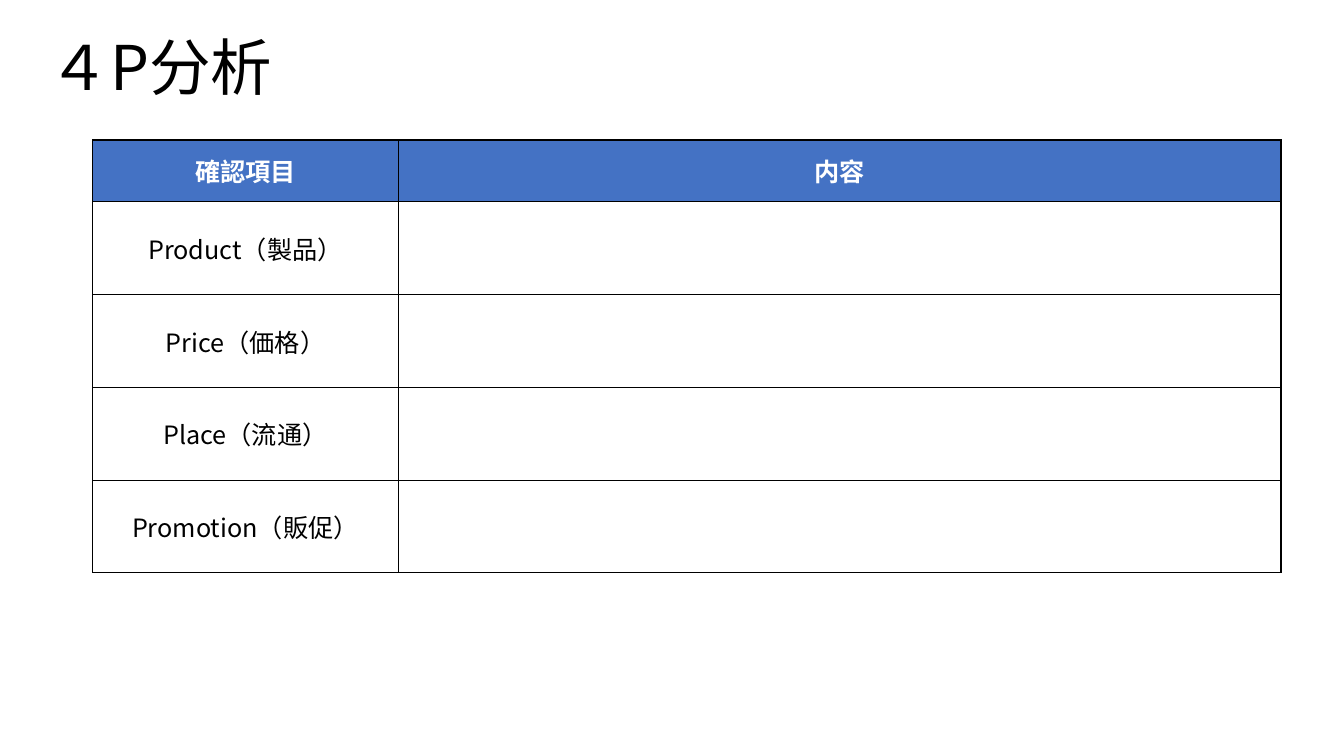
from dataclasses import dataclass

from lxml.etree import SubElement
from pptx import Presentation
from pptx.dml.color import RGBColor
from pptx.enum.text import MSO_ANCHOR, MSO_AUTO_SIZE, PP_ALIGN
from pptx.oxml.ns import qn
from pptx.util import Pt


@dataclass(frozen=True)
class Theme:
    font: str = "Noto Sans CJK JP"
    title_size: int = 44
    table_size: int = 18
    ink: str = "000000"
    paper: str = "FFFFFF"
    header: str = "4472C4"
    border: int = 1


THEME = Theme()
HEADINGS = ("確認項目", "内容")
ITEMS = ("Product（製品）", "Price（価格）", "Place（流通）", "Promotion（販促）")


def format_runs(p, size, color, bold=False):
    for r in p.runs:
        r.font.size = Pt(size)
        r.font.bold = bold
        r.font.color.rgb = RGBColor.from_string(color)
        r.font.name = THEME.font
        SubElement(r.font._element, qn("a:ea"), typeface=THEME.font)


def add_borders(cell):
    """Outline all four sides; borders must precede the fill in the XML."""
    tcPr = cell._tc.get_or_add_tcPr()
    for side in ("lnL", "lnR", "lnT", "lnB"):
        line = SubElement(tcPr, qn(f"a:{side}"), w=str(Pt(THEME.border)))
        fill = SubElement(line, qn("a:solidFill"))
        SubElement(fill, qn("a:srgbClr"), val=THEME.ink)


def format_cell(cell, text, fill, color, bold):
    add_borders(cell)
    cell.fill.solid()
    cell.fill.fore_color.rgb = RGBColor.from_string(fill)
    cell.vertical_anchor = MSO_ANCHOR.MIDDLE
    p = cell.text_frame.paragraphs[0]
    p.alignment = PP_ALIGN.CENTER
    p.font.size = Pt(THEME.table_size)
    if text:
        p.text = text
        format_runs(p, THEME.table_size, color, bold)


def place_title(s, text, left, top, width, height):
    title = s.shapes.title
    title.left, title.top = Pt(left), Pt(top)
    title.width, title.height = Pt(width), Pt(height)
    tf = title.text_frame
    tf.text = text
    tf.word_wrap = True
    tf.auto_size = MSO_AUTO_SIZE.NONE
    tf.vertical_anchor = MSO_ANCHOR.MIDDLE
    p = tf.paragraphs[0]
    p.alignment = PP_ALIGN.LEFT
    p.line_spacing = 0.9
    format_runs(p, THEME.title_size, THEME.ink)


def add_analysis_table(s, left, top, width, height, label_width=218.2, header_height=44.2):
    rows = [HEADINGS] + [(item, "") for item in ITEMS]
    table = s.shapes.add_table(
        len(rows), len(HEADINGS), Pt(left), Pt(top), Pt(width), Pt(height)
    ).table
    table.columns[0].width = Pt(label_width)
    table.columns[1].width = Pt(width - label_width)
    item_height = (height - header_height) / len(ITEMS)
    for i, texts in enumerate(rows):
        is_header = i == 0
        table.rows[i].height = Pt(header_height if is_header else item_height)
        fill, color = (THEME.header, THEME.paper) if is_header else (THEME.paper, THEME.ink)
        for j, text in enumerate(texts):
            format_cell(table.cell(i, j), text, fill, color, bold=is_header)


def main():
    prs = Presentation()
    prs.slide_width, prs.slide_height = Pt(960), Pt(540)
    s = prs.slides.add_slide(prs.slide_layouts.get_by_name("Title Only"))
    place_title(s, "４P分析", 27.4, 10.8, 828, 79.2)
    add_analysis_table(s, 66.2, 100, 848.9, 309.2)
    prs.save("out.pptx")


if __name__ == "__main__":
    main()
